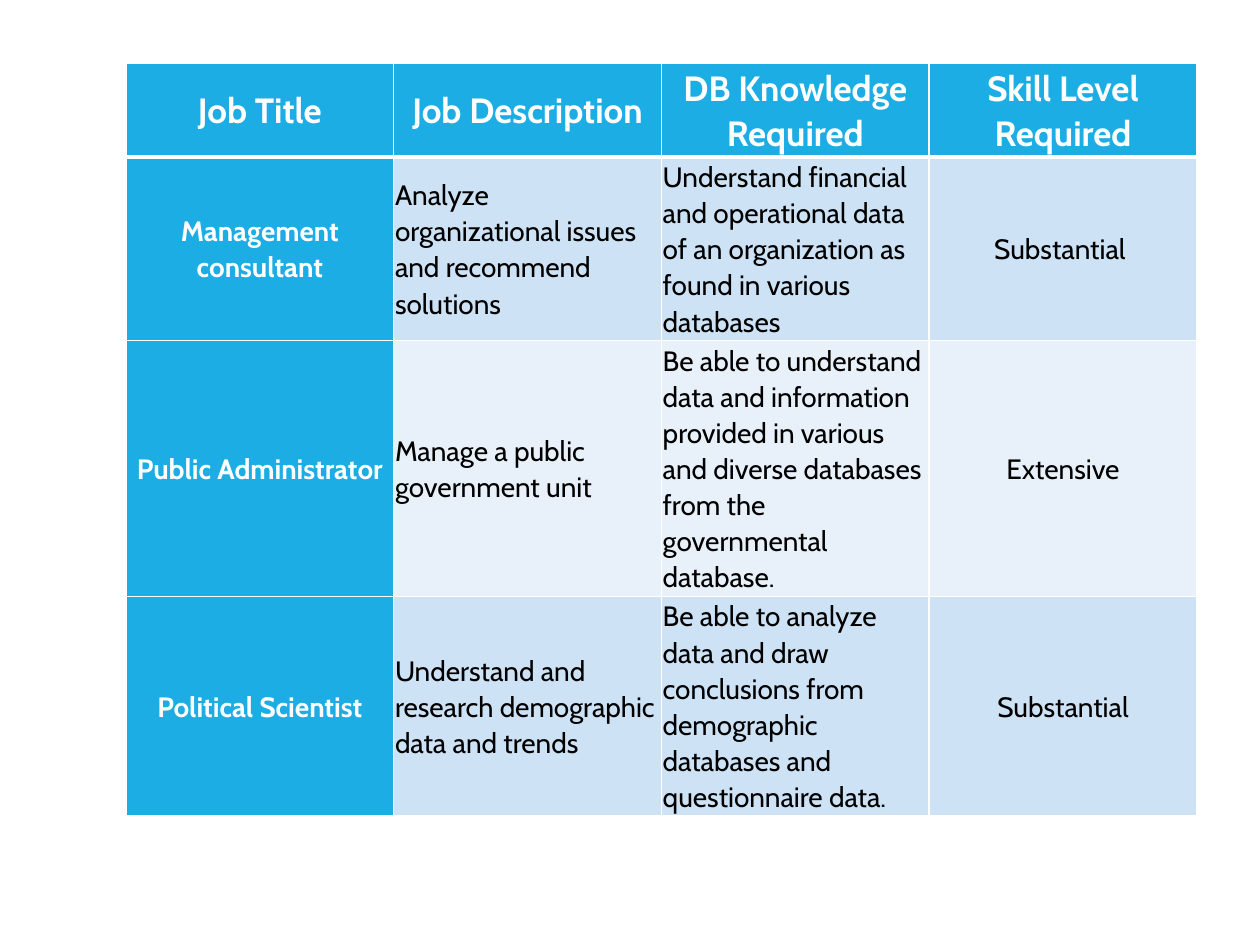
from lxml import etree
from pptx import Presentation
from pptx.dml.color import RGBColor
from pptx.enum import text
from pptx.oxml import ns
from pptx.util import Pt

WHITE, BLACK, BLUE = "FFFFFF", "000000", "1CADE4"
BANDS = ("CDE3F5", "E8F1FA")
HEIGHTS = (53, 104.4, 146.3, 125.1)
ROWS = (
    ("Job Title", "Job Description", "DB Knowledge Required", "Skill Level Required"),
    ("Management consultant",
     "Analyze organizational issues and recommend solutions",
     "Understand financial and operational data of an organization as found in various databases",
     "Substantial "),
    ("Public Administrator",
     "Manage a public government unit",
     "Be able to understand data and information provided in various and diverse databases "
     "from the governmental database.",
     "Extensive"),
    ("Political Scientist",
     "Understand and research demographic data and trends",
     "Be able to analyze data and draw conclusions from demographic databases and "
     "questionnaire data.",
     "Substantial"),
)


def color(code):
    """Turn a hex string into a colour."""
    return RGBColor.from_string(code)


def border(cell, widths):
    """Draw white left, right, top and bottom cell borders."""
    props = cell._tc.get_or_add_tcPr()
    for place, (side, width) in enumerate(zip("LRTB", widths)):
        line = etree.Element(ns.qn(f"a:ln{side}"), w=str(Pt(width)))
        fill = etree.SubElement(line, ns.qn("a:solidFill"))
        etree.SubElement(fill, ns.qn("a:srgbClr"), val=WHITE)
        props.insert(place, line)


def write(cell, words, size, tint, bold, align, after):
    """Write one formatted paragraph in a cell."""
    para = cell.text_frame.paragraphs[0]
    para.alignment = align
    para.line_spacing = 1.07
    para.space_after = Pt(after)
    run = para.add_run()
    run.text = words
    run.font.name = "Cabin"
    run.font.size = Pt(size)
    run.font.bold = bold
    run.font.color.rgb = color(tint)


def style(cell, row, col, words):
    """Format a cell by its place in the table."""
    head = row == 0
    key = head or col == 0
    cell.margin_left = cell.margin_right = Pt(0.75)
    cell.margin_top = cell.margin_bottom = Pt(0.75)
    cell.vertical_anchor = text.MSO_ANCHOR.MIDDLE
    cell.fill.solid()
    cell.fill.fore_color.rgb = color(BLUE if key else BANDS[(row - 1) % 2])
    border(cell, (1, 1, 3 if row == 1 else 1, 3 if head else 1))
    align = text.PP_ALIGN.CENTER if key or col == 3 else text.PP_ALIGN.LEFT
    write(cell, words, 20 if head else 16, WHITE if key else BLACK, key, align,
          0 if head else 8)


def add_jobs(slide):
    """Add the table of jobs and the skills they need."""
    frame = slide.shapes.add_table(len(ROWS), len(ROWS[0]), Pt(72), Pt(36),
                                   Pt(612), Pt(sum(HEIGHTS)))
    table = frame.table
    for row, (height, cells) in enumerate(zip(HEIGHTS, ROWS)):
        table.rows[row].height = Pt(height)
        for col, words in enumerate(cells):
            style(table.cell(row, col), row, col, words)


def main():
    """Build and save the slide."""
    deck = Presentation()
    deck.slide_width, deck.slide_height = Pt(720), Pt(540)
    slide = deck.slides.add_slide(deck.slide_layouts[6])
    add_jobs(slide)
    deck.save("out.pptx")


if __name__ == "__main__":
    main()
